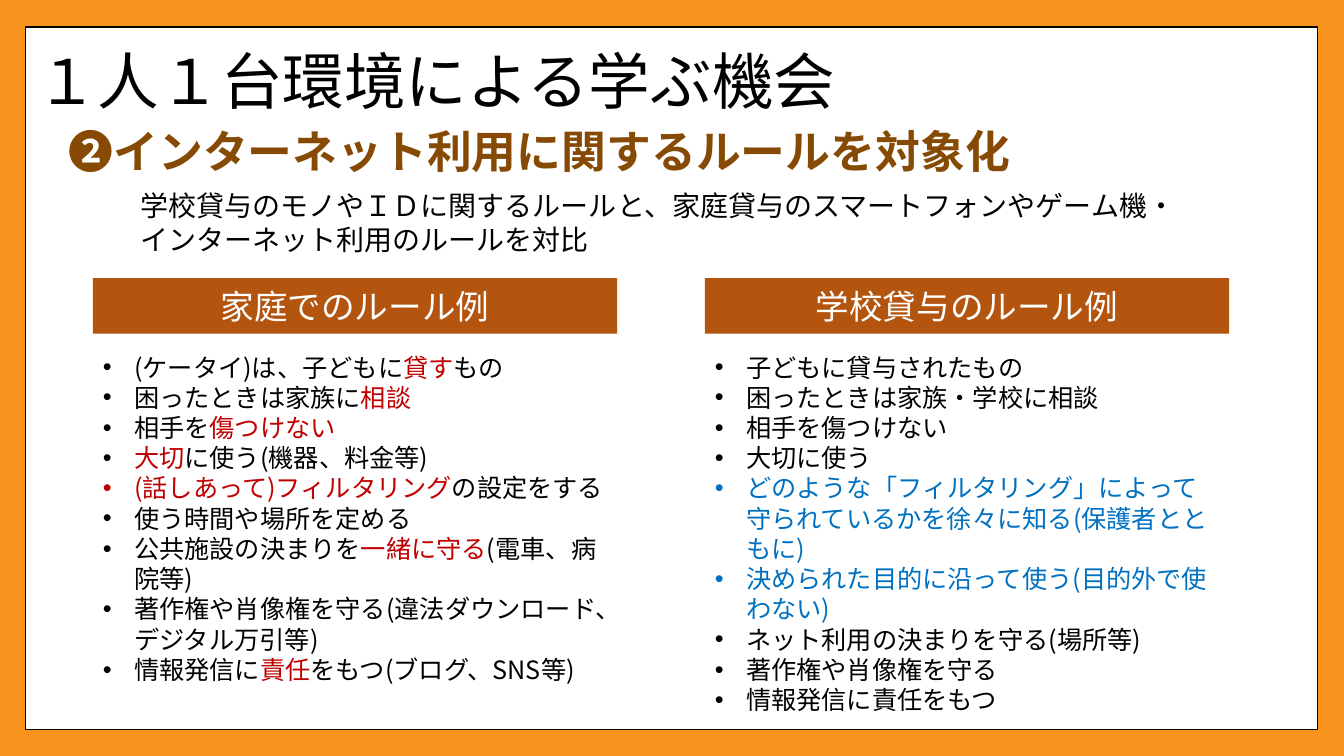
from dataclasses import dataclass

from lxml import etree
from pptx import Presentation
from pptx import util as u
from pptx.dml.color import RGBColor
from pptx.enum import shapes, text
from pptx.oxml import ns


@dataclass(frozen=True)
class Theme:
    font: str = "Noto Sans CJK JP"
    frame: str = "F8931D"
    paper: str = "FFFFFF"
    ink: str = "000000"
    heading: str = "864A04"
    banner: str = "B3540F"
    home: str = "C00000"
    school: str = "0070C0"
    title_size: int = 44
    heading_size: int = 32
    banner_size: int = 24
    lead_size: int = 20
    list_size: int = 18


THEME = Theme()
WIDTH, HEIGHT = 13.33, 7.5

# Column grid: two equal columns, each a banner over a list
FIRST_LEFT, COLUMN_STEP, COLUMN_WIDTH = 0.92, 6.07, 5.2
BANNER_ROW = (2.76, 0.55)
LIST_ROW = (3.44, 3.74)
INDENT = 0.31

# Text between bars takes the column's accent colour
HOME_RULES = [
    "(ケータイ)は、子どもに|貸す|もの",
    "困ったときは家族に|相談",
    "相手を|傷つけない",
    "|大切|に使う(機器、料金等)",
    "|(話しあって)フィルタリング|の設定をする",
    "使う時間や場所を定める",
    "公共施設の決まりを|一緒に守る|(電車、病院等)",
    "著作権や肖像権を守る(違法ダウンロード、デジタル万引等)",
    "情報発信に|責任|をもつ(ブログ、SNS等)",
]
SCHOOL_RULES = [
    "子どもに貸与されたもの",
    "困ったときは家族・学校に相談",
    "相手を傷つけない",
    "大切に使う",
    "|どのような「フィルタリング」によって守られているかを徐々に知る(保護者とともに)",
    "|決められた目的に沿って使う(目的外で使わない)",
    "ネット利用の決まりを守る(場所等)",
    "著作権や肖像権を守る",
    "情報発信に責任をもつ",
]
COLUMNS = [
    ("家庭でのルール例", HOME_RULES, THEME.home),
    ("学校貸与のルール例", SCHOOL_RULES, THEME.school),
]


def rgb(color):
    return RGBColor.from_string(color)


def place(box, left, top, width, height):
    box.left, box.top = u.Inches(left), u.Inches(top)
    box.width, box.height = u.Inches(width), u.Inches(height)


def style(para, size, color, bold=False, align=text.PP_ALIGN.LEFT, spacing=1.0):
    para.alignment, para.line_spacing = align, spacing
    para.space_before = para.space_after = u.Pt(0)
    font = para.font
    font.name, font.size, font.bold = THEME.font, u.Pt(size), bold
    font.color.rgb = rgb(color)
    # East Asian glyphs need their own typeface entry
    etree.SubElement(font._element, ns.qn("a:ea"), typeface=THEME.font)


def set_frame(box, anchor):
    frame = box.text_frame
    frame.word_wrap = True
    frame.auto_size = text.MSO_AUTO_SIZE.NONE
    frame.vertical_anchor = anchor
    return frame


def add_panel(page):
    panel = page.shapes.add_shape(shapes.MSO_SHAPE.RECTANGLE, 0, 0, 0, 0)
    place(panel, 0.25, 0.27, 12.82, 6.97)
    panel.shadow.inherit = False
    panel.fill.solid()
    panel.fill.fore_color.rgb = rgb(THEME.paper)
    panel.line.color.rgb = rgb(THEME.ink)
    panel.line.width = u.Pt(1)
    # Send behind the placeholders
    page.shapes._spTree.insert(2, panel._element)


def fill_title(box, words):
    place(box, 0.26, 0.27, 12.8, 1.14)
    para = set_frame(box, text.MSO_ANCHOR.MIDDLE).paragraphs[0]
    para.text = words
    style(para, THEME.title_size, THEME.ink, spacing=0.9)


def add_text(page, area, words, size, color, bold=False):
    box = page.shapes.add_textbox(0, 0, 0, 0)
    place(box, *area)
    frame = set_frame(box, text.MSO_ANCHOR.TOP)
    frame.margin_left = frame.margin_right = 0
    frame.margin_top = frame.margin_bottom = 0
    para = frame.paragraphs[0]
    para.text = words
    style(para, size, color, bold)


def fill_banner(box, left, words):
    place(box, left, BANNER_ROW[0], COLUMN_WIDTH, BANNER_ROW[1])
    box.fill.solid()
    box.fill.fore_color.rgb = rgb(THEME.banner)
    para = set_frame(box, text.MSO_ANCHOR.MIDDLE).paragraphs[0]
    para.text = words
    style(para, THEME.banner_size, THEME.paper, align=text.PP_ALIGN.CENTER)


def add_bullet(para, color):
    props = para._p.get_or_add_pPr()
    props.set("marL", str(u.Inches(INDENT)))
    props.set("indent", str(-u.Inches(INDENT)))
    tint = etree.SubElement(props, ns.qn("a:buClr"))
    etree.SubElement(tint, ns.qn("a:srgbClr"), val=color)
    etree.SubElement(props, ns.qn("a:buFont"), typeface="Arial")
    etree.SubElement(props, ns.qn("a:buChar"), char="•")


def fill_list(box, left, rules, accent):
    place(box, left, LIST_ROW[0], COLUMN_WIDTH, LIST_ROW[1])
    frame = set_frame(box, text.MSO_ANCHOR.TOP)
    for row, rule in enumerate(rules):
        para = frame.add_paragraph() if row else frame.paragraphs[0]
        parts = rule.split("|")
        # The bullet is tinted when a rule is mostly accent from its start
        tinted = not parts[0] and len(parts[1]) > len("".join(parts[2:]))
        add_bullet(para, accent if tinted else THEME.ink)
        style(para, THEME.list_size, THEME.ink)
        for position, part in enumerate(parts):
            if part:
                span = para.add_run()
                span.text = part
                if position % 2:
                    span.font.color.rgb = rgb(accent)


def main():
    deck = Presentation()
    deck.slide_width, deck.slide_height = u.Inches(WIDTH), u.Inches(HEIGHT)
    page = deck.slides.add_slide(deck.slide_layouts.get_by_name("Comparison"))
    page.background.fill.solid()
    page.background.fill.fore_color.rgb = rgb(THEME.frame)

    # Panel, title and introduction
    add_panel(page)
    fill_title(page.shapes.title, "１人１台環境による学ぶ機会")
    add_text(page, (0.68, 1.23, 10.58, 0.55),
             "❷インターネット利用に関するルールを対象化",
             THEME.heading_size, THEME.heading, bold=True)
    add_text(page, (1.39, 1.87, 10.32, 0.8),
             "学校貸与のモノやＩＤに関するルールと、家庭貸与のスマートフォンや"
             "ゲーム機・インターネット利用のルールを対比",
             THEME.lead_size, THEME.ink)

    # Rule columns: placeholders come in banner and list pairs
    for column, (heading, rules, accent) in enumerate(COLUMNS):
        left = FIRST_LEFT + column * COLUMN_STEP
        fill_banner(page.placeholders[1 + 2 * column], left, heading)
        fill_list(page.placeholders[2 + 2 * column], left, rules, accent)

    deck.save("out.pptx")


if __name__ == "__main__":
    main()
